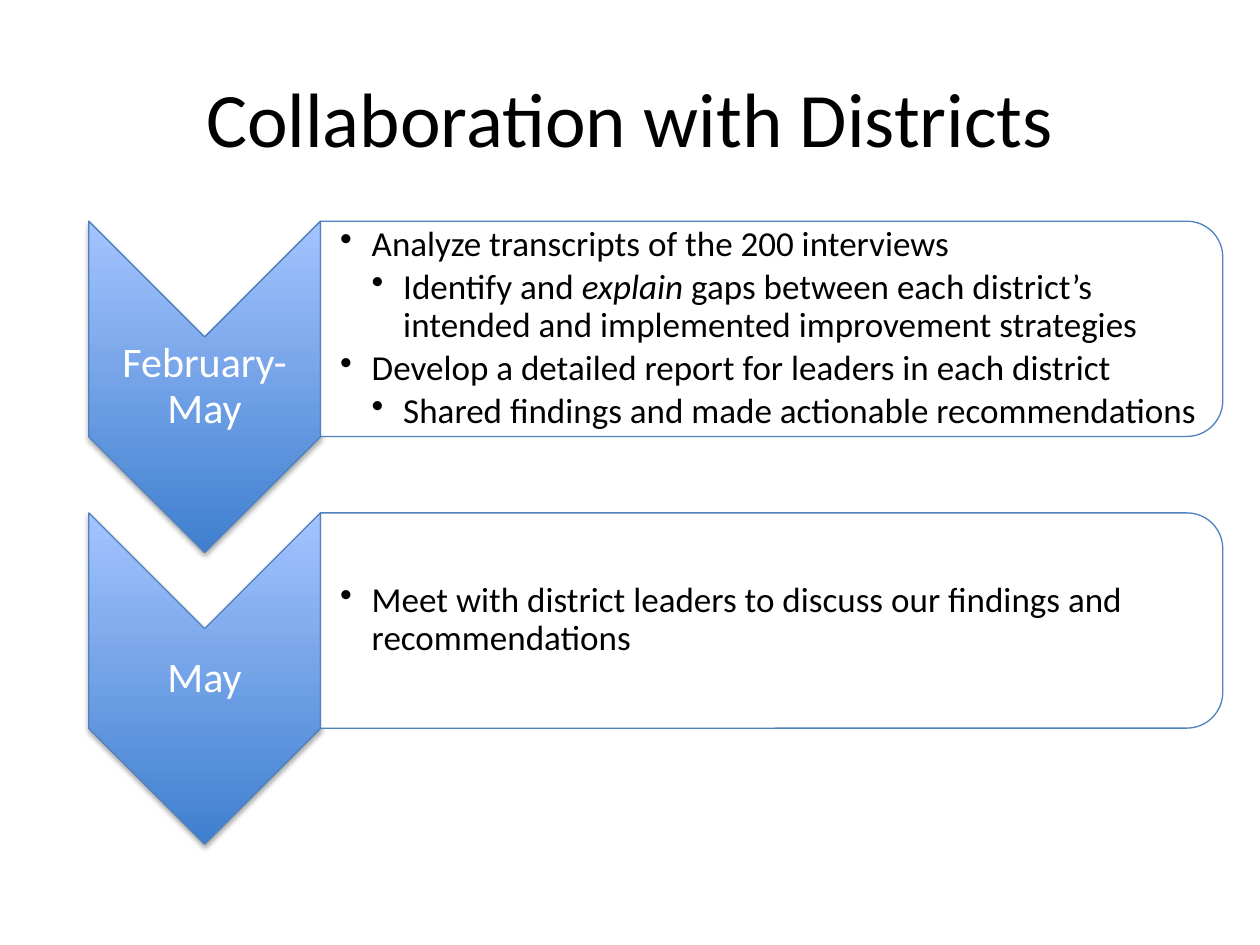
from lxml.etree import fromstring, SubElement
from pptx import Presentation
from pptx.dml.color import RGBColor
from pptx.enum.shapes import MSO_SHAPE as Shape
from pptx.enum.text import MSO_ANCHOR as Anchor, PP_ALIGN as Align
from pptx.oxml.ns import nsdecls, qn
from pptx.util import Cm, Pt

COLORS = {"text": "000000", "label": "FFFFFF", "panel": "FFFFFF", "outline": "4F81BD",
          "light": "A4C4FF", "dark": "3F7FCE", "shadow": "000000"}
FONT = "Calibri"
CHEVRON_W, CHEVRON_H, PANEL_H = 4.67, 6.68, 4.34
ROW_LEFT, ROW_TOP, ROW_WIDTH, ROW_PITCH = 1.79, 4.46, 22.86, 5.88

# Each step: label, then bullets as (level, runs), a run being (text, italic)
STEPS = [
    ("February-May", [
        (1, [("Analyze transcripts of the 200 interviews", False)]),
        (2, [("Identify and ", False), ("explain", True),
             (" gaps between each district’s intended and implemented "
              "improvement strategies", False)]),
        (1, [("Develop a detailed report for leaders in each district", False)]),
        (2, [("Shared findings and made actionable recommendations", False)]),
    ]),
    ("May", [
        (1, [("Meet with district leaders to discuss our findings and "
              "recommendations", False)]),
    ]),
]


def rgb(name):
    return RGBColor.from_string(COLORS[name])


def add_run(paragraph, text, size, color, italic=None):
    run = paragraph.add_run()
    run.text = text
    run.font.size, run.font.name, run.font.italic = Pt(size), FONT, italic
    run.font.color.rgb = rgb(color)


def add_turned(slide, kind, left, top, width, height):
    """Add a shape turned a quarter clockwise that fills the given box."""
    shift = (width - height) / 2
    shape = slide.shapes.add_shape(kind, Cm(left + shift), Cm(top - shift),
                                   Cm(height), Cm(width))
    shape.rotation = 90
    shape.shadow.inherit = False
    shape.line.color.rgb = rgb("outline")
    shape.line.width = Pt(0.75)
    return shape


def add_text_frame(slide, left, top, width, height, inset, left_inset):
    box = slide.shapes.add_textbox(Cm(left), Cm(top), Cm(width), Cm(height))
    frame = box.text_frame
    frame.word_wrap = True
    frame.vertical_anchor = Anchor.MIDDLE
    frame.margin_top = frame.margin_right = frame.margin_bottom = Cm(inset)
    frame.margin_left = Cm(left_inset)
    return frame


def set_spacing(paragraph, after_percent):
    paragraph.line_spacing = 0.9
    after = SubElement(paragraph._p.get_or_add_pPr(), qn("a:spcAft"))
    SubElement(after, qn("a:spcPct"), val=str(after_percent * 1000))


def add_title(slide, text, left, top, width, height):
    title = slide.shapes.title
    title.left, title.top, title.width, title.height = map(Cm, (left, top, width, height))
    title.text_frame.vertical_anchor = Anchor.MIDDLE
    paragraph = title.text_frame.paragraphs[0]
    paragraph.alignment = Align.CENTER
    add_run(paragraph, text, 44, "text")


def add_chevron(slide, label, left, top):
    chevron = add_turned(slide, Shape.CHEVRON, left, top, CHEVRON_W, CHEVRON_H)
    # Gradient that stays vertical while the shape is turned
    properties = chevron._element.spPr
    properties.find(qn("a:ln")).addprevious(fromstring(
        f'<a:gradFill {nsdecls("a")} rotWithShape="0"><a:gsLst>'
        f'<a:gs pos="0"><a:srgbClr val="{COLORS["dark"]}"/></a:gs>'
        f'<a:gs pos="100000"><a:srgbClr val="{COLORS["light"]}"/></a:gs>'
        '</a:gsLst><a:lin ang="16200000" scaled="0"/></a:gradFill>'))
    # Soft shadow below
    properties.find(qn("a:effectLst")).append(fromstring(
        f'<a:outerShdw {nsdecls("a")} blurRad="{Pt(3.1)}" dist="{Pt(1.8)}" '
        f'dir="5400000" rotWithShape="0"><a:srgbClr val="{COLORS["shadow"]}">'
        '<a:alpha val="35000"/></a:srgbClr></a:outerShdw>'))
    # Label under the notch
    frame = add_text_frame(slide, left, top + CHEVRON_W / 2, CHEVRON_W,
                           CHEVRON_H - CHEVRON_W, 0.05, 0.05)
    paragraph = frame.paragraphs[0]
    paragraph.alignment = Align.CENTER
    set_spacing(paragraph, 35)
    add_run(paragraph, label, 24, "label")


def add_panel(slide, bullets, left, top, width):
    panel = add_turned(slide, Shape.ROUND_2_SAME_RECTANGLE, left, top, width, PANEL_H)
    panel.fill.solid()
    panel.fill.fore_color.rgb = rgb("panel")
    SubElement(panel._element.spPr.find(".//" + qn("a:srgbClr")), qn("a:alpha"), val="90000")
    # Bulleted text
    frame = add_text_frame(slide, left, top + 0.21, width - 0.21, PANEL_H - 0.42, 0.03, 0.4)
    for index, (level, runs) in enumerate(bullets):
        paragraph = frame.add_paragraph() if index else frame.paragraphs[0]
        paragraph.level = level
        set_spacing(paragraph, 15)
        properties = paragraph._p.get_or_add_pPr()
        properties.set("marL", str(Cm(0.635 * level)))
        properties.set("indent", str(-Cm(0.635)))
        SubElement(properties, qn("a:buChar"), char="•")
        for text, italic in runs:
            add_run(paragraph, text, 20, "text", italic)


def add_step(slide, label, bullets, left, top, width):
    add_chevron(slide, label, left, top)
    add_panel(slide, bullets, left + CHEVRON_W, top, width - CHEVRON_W)


def main():
    deck = Presentation()
    deck.slide_width, deck.slide_height = Cm(25.4), Cm(19.05)
    slide = deck.slides.add_slide(deck.slide_layouts[5])
    add_title(slide, "Collaboration with Districts", 1.27, 0.76, 22.86, 3.18)
    for row, (label, bullets) in enumerate(STEPS):
        add_step(slide, label, bullets, ROW_LEFT, ROW_TOP + row * ROW_PITCH, ROW_WIDTH)
    deck.save("out.pptx")


if __name__ == "__main__":
    main()
